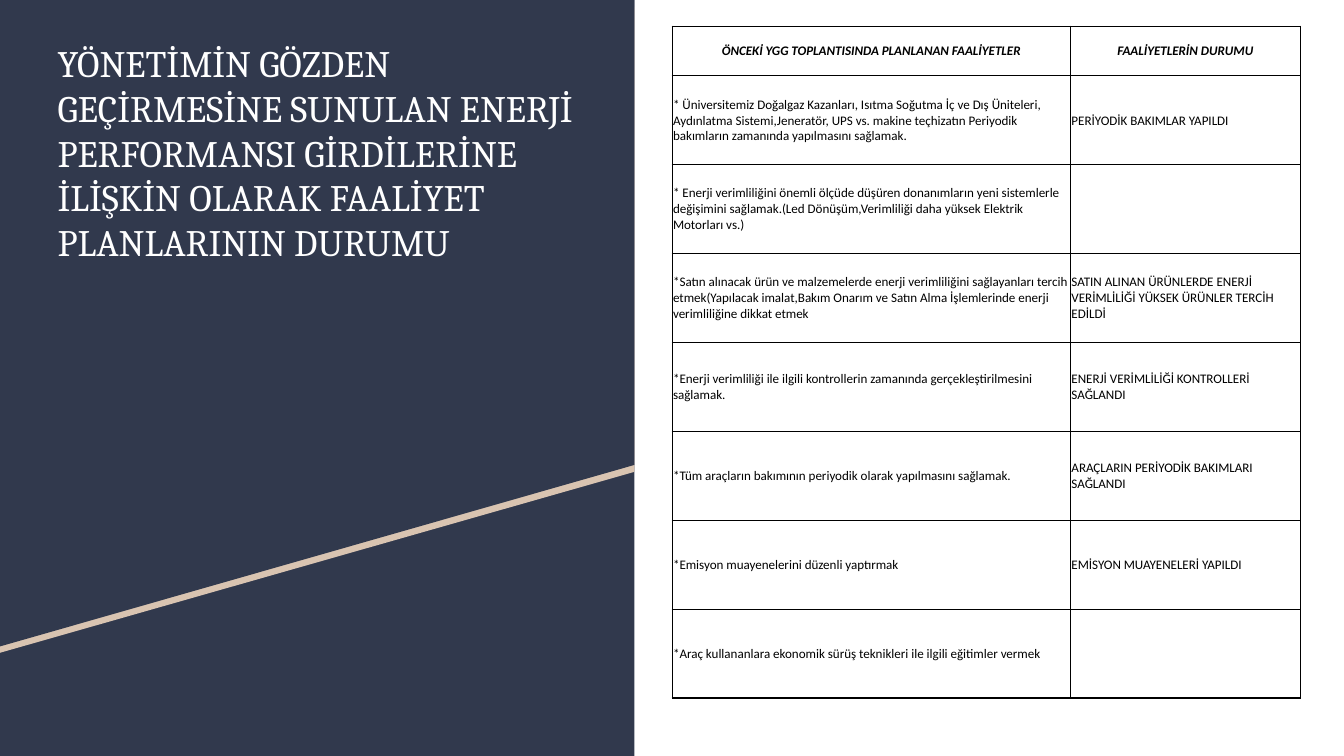
from dataclasses import dataclass
from lxml import etree
from pptx import Presentation
from pptx.dml.color import RGBColor
from pptx.enum import shapes, text
from pptx.oxml import ns
from pptx.util import Cm, Pt

COLORS = {"navy": "31394D", "sand": "D9C4B1", "white": "FFFFFF", "black": "000000"}
TITLE = (
    "YÖNETİMİN GÖZDEN GEÇİRMESİNE SUNULAN ENERJİ PERFORMANSI "
    "GİRDİLERİNE İLİŞKİN OLARAK FAALİYET PLANLARININ DURUMU"
)
WIDE, HIGH = 25.4, 14.29
SIDE = 11.99
COLS = (7.53, 4.34)
HEAD, BODY = 0.93, 1.68


@dataclass
class Band:
    top: float
    left: float
    right: float
    color: str


@dataclass
class Row:
    plan: str
    state: str = ""


BANDS = [
    Band(0.13, 12.34, 8.92, "sand"),
    Band(0, 12.22, 8.79, "navy"),
]
ROWS = [
    Row("ÖNCEKİ YGG TOPLANTISINDA PLANLANAN FAALİYETLER", "FAALİYETLERİN DURUMU"),
    Row(
        "* Üniversitemiz Doğalgaz Kazanları, Isıtma Soğutma İç ve Dış Üniteleri, "
        "Aydınlatma Sistemi,Jeneratör, UPS vs. makine teçhizatın Periyodik "
        "bakımların zamanında yapılmasını sağlamak.",
        "PERİYODİK BAKIMLAR YAPILDI",
    ),
    Row(
        "* Enerji verimliliğini önemli ölçüde düşüren donanımların yeni sistemlerle "
        "değişimini sağlamak.(Led Dönüşüm,Verimliliği daha yüksek Elektrik "
        "Motorları vs.)"
    ),
    Row(
        "*Satın alınacak ürün ve malzemelerde enerji verimliliğini sağlayanları tercih "
        "etmek(Yapılacak imalat,Bakım Onarım ve Satın Alma İşlemlerinde enerji "
        "verimliliğine dikkat etmek",
        "SATIN ALINAN ÜRÜNLERDE ENERJİ VERİMLİLİĞİ YÜKSEK ÜRÜNLER TERCİH EDİLDİ",
    ),
    Row(
        "*Enerji verimliliği ile ilgili kontrollerin zamanında gerçekleştirilmesini sağlamak.",
        "ENERJİ VERİMLİLİĞİ KONTROLLERİ SAĞLANDI",
    ),
    Row(
        "*Tüm araçların bakımının periyodik olarak yapılmasını sağlamak.",
        "ARAÇLARIN PERİYODİK BAKIMLARI SAĞLANDI",
    ),
    Row("*Emisyon muayenelerini düzenli yaptırmak", "EMİSYON MUAYENELERİ YAPILDI"),
    Row("*Araç kullananlara ekonomik sürüş teknikleri ile ilgili eğitimler vermek"),
]


def tint(name: str) -> RGBColor:
    return RGBColor.from_string(COLORS[name])


def paint(shape, color: str) -> None:
    shape.shadow.inherit = False
    shape.fill.solid()
    shape.fill.fore_color.rgb = tint(color)
    shape.line.fill.background()


def add_band(slide, band: Band) -> None:
    path = slide.shapes.build_freeform(Cm(0), Cm(band.top))
    path.add_line_segments(
        [
            (Cm(SIDE), Cm(band.top)),
            (Cm(SIDE), Cm(band.right)),
            (Cm(0), Cm(band.left)),
        ]
    )
    paint(path.convert_to_shape(), band.color)


def add_run(para, words: str, font: str, size: float, color: str, bold: bool = False) -> None:
    run = para.add_run()
    run.text = words
    run.font.name = font
    run.font.size = Pt(size)
    run.font.bold = run.font.italic = bold
    run.font.color.rgb = tint(color)


def add_title(slide) -> None:
    box = slide.shapes.add_textbox(Cm(0.84), Cm(0.51), Cm(10.49), Cm(11.15))
    frame = box.text_frame
    frame.word_wrap = True
    frame.margin_left = frame.margin_right = Cm(0.25)
    frame.margin_top = frame.margin_bottom = Cm(0.25)
    add_run(frame.paragraphs[0], TITLE, "Cambria", 20, "white")


def add_edge(cell, side: str, width: float) -> None:
    props = cell._tc.get_or_add_tcPr()
    line = etree.SubElement(props, ns.qn(f"a:{side}"), w=str(Pt(width)))
    fill = etree.SubElement(line, ns.qn("a:solidFill"))
    etree.SubElement(fill, ns.qn("a:srgbClr"), val=COLORS["black"])


def fill_cell(cell, words: str, first: bool, last: bool) -> None:
    cell.vertical_anchor = text.MSO_ANCHOR.MIDDLE
    cell.margin_left = cell.margin_right = cell.margin_top = Cm(0.02)
    cell.margin_bottom = Cm(0)
    para = cell.text_frame.paragraphs[0]
    para.font.size = Pt(7)
    if first:
        para.alignment = text.PP_ALIGN.CENTER
    if words:
        add_run(para, words, "Calibri", 7, "black", first)
    add_edge(cell, "lnL", 0.5)
    add_edge(cell, "lnR", 0.5)
    add_edge(cell, "lnT", 1 if first else 0.5)
    add_edge(cell, "lnB", 1 if last else 0.5)
    cell.fill.background()


def add_grid(slide, rows: list[Row]) -> None:
    tall = HEAD + BODY * (len(rows) - 1)
    frame = slide.shapes.add_table(
        len(rows), len(COLS), Cm(12.7), Cm(0.5), Cm(sum(COLS)), Cm(tall)
    )
    grid = frame.table
    grid.first_row = grid.horz_banding = False
    for col, width in zip(grid.columns, COLS):
        col.width = Cm(width)
    for i, row in enumerate(rows):
        grid.rows[i].height = Cm(BODY if i else HEAD)
        for j, words in enumerate((row.plan, row.state)):
            fill_cell(grid.cell(i, j), words, i == 0, i == len(rows) - 1)


def main() -> None:
    deck = Presentation()
    deck.slide_width, deck.slide_height = Cm(WIDE), Cm(HIGH)
    slide = deck.slides.add_slide(deck.slide_layouts[6])
    panel = slide.shapes.add_shape(
        shapes.MSO_SHAPE.RECTANGLE, Cm(0), Cm(0), Cm(SIDE), Cm(HIGH)
    )
    paint(panel, "navy")
    for band in BANDS:
        add_band(slide, band)
    add_title(slide)
    add_grid(slide, ROWS)
    deck.save("out.pptx")


if __name__ == "__main__":
    main()
